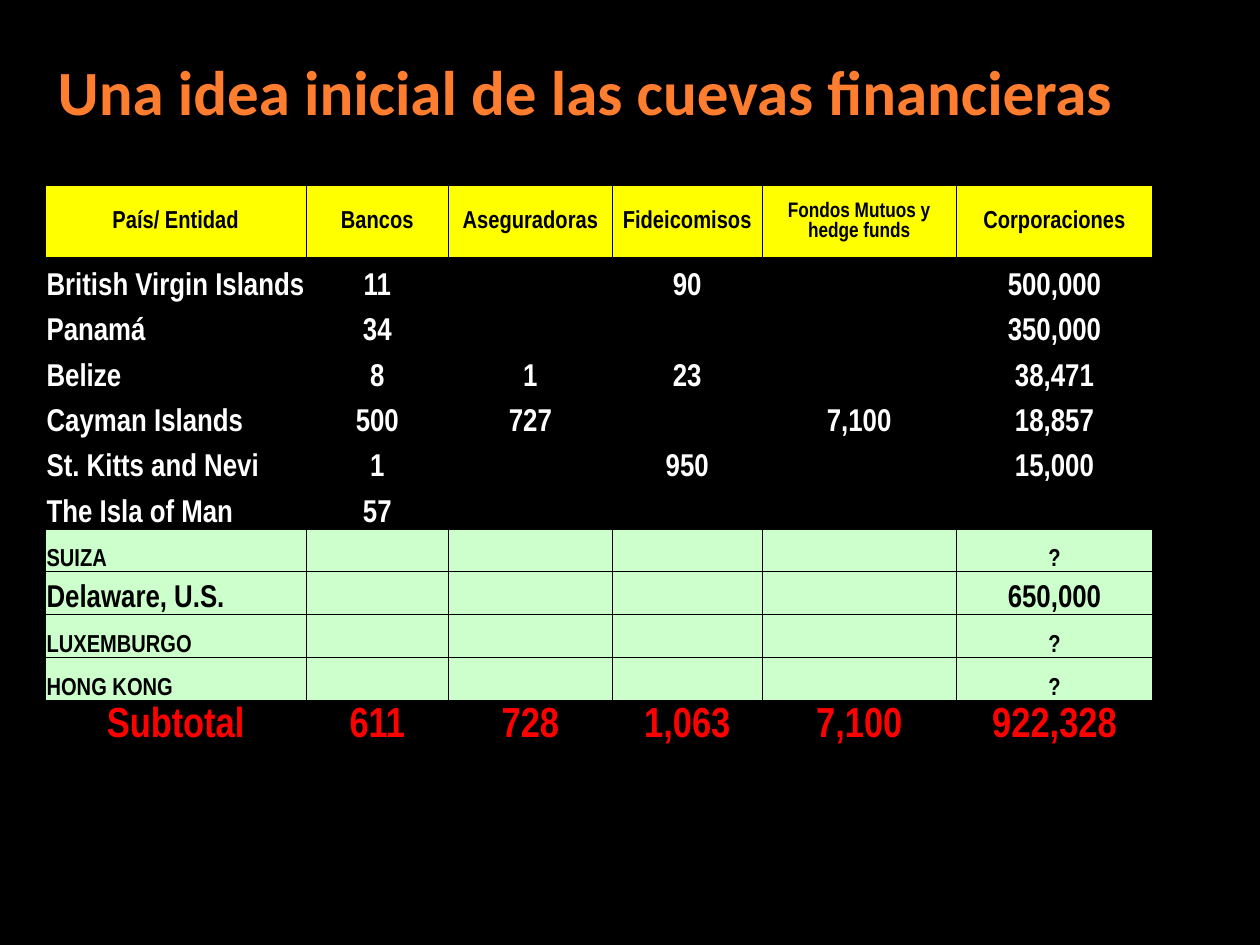
from lxml import etree
from pptx import Presentation
from pptx import util as u
from pptx.dml.color import RGBColor
from pptx.enum import text
from pptx.oxml import ns

BLACK = RGBColor(0, 0, 0)
WHITE = RGBColor(255, 255, 255)
ORANGE = RGBColor(0xFF, 0x7D, 0x2F)
YELLOW = RGBColor(255, 255, 0)
GREEN = RGBColor(0xCC, 0xFF, 0xCC)
RED = RGBColor(255, 0, 0)

MIDDLE = text.MSO_ANCHOR.MIDDLE
BOTTOM = text.MSO_ANCHOR.BOTTOM
CENTER = text.PP_ALIGN.CENTER
LEFT = text.PP_ALIGN.LEFT

COLUMN_WIDTHS = [2.07, 1.13, 1.3, 1.19, 1.54, 1.56]
HEADER = ["País/ Entidad", "Bancos", "Aseguradoras", "Fideicomisos",
          "Fondos Mutuos y hedge funds", "Corporaciones"]
HAVENS = [
    ["British Virgin Islands", "11", "", "90", "", "500,000"],
    ["Panamá", "34", "", "", "", "350,000"],
    ["Belize", "8", "1", "23", "", "38,471"],
    ["Cayman Islands", "500", "727", "", "7,100", "18,857"],
    ["St. Kitts and Nevi", "1", "", "950", "", "15,000"],
    ["The Isla of Man", "57", "", "", "", ""],
]
OTHERS = [("SUIZA", "?", 14), ("Delaware, U.S.", "650,000", 18),
          ("LUXEMBURGO", "?", 14), ("HONG KONG", "?", 14)]
SUBTOTAL = ["Subtotal", "611", "728", "1,063", "7,100", "922,328"]


class SlideBuilder:
    title_font = "Calibri"
    table_font = "Arial Narrow"

    def __init__(self, presentation):
        self.slide = presentation.slides.add_slide(presentation.slide_layouts[6])
        fill = self.slide.background.fill
        fill.solid()
        fill.fore_color.rgb = BLACK

    def set_text(self, frame, value, font, size, color, align):
        frame.text = value
        paragraph = frame.paragraphs[0]
        paragraph.alignment = align
        for run in paragraph.runs:
            run.font.name = font
            run.font.size = u.Pt(size)
            run.font.bold = True
            run.font.color.rgb = color

    def title(self, value, left, top, width, height):
        shape = self.slide.shapes.add_textbox(
            u.Inches(left), u.Inches(top), u.Inches(width), u.Inches(height))
        frame = shape.text_frame
        frame.word_wrap = True
        frame.vertical_anchor = MIDDLE
        self.set_text(frame, value, self.title_font, 36, ORANGE, CENTER)

    def table(self, left, top, widths, heights):
        shape = self.slide.shapes.add_table(
            len(heights), len(widths), u.Inches(left), u.Inches(top),
            u.Inches(sum(widths)), u.Inches(sum(heights)))
        table = shape.table
        table.first_row = table.horz_banding = False
        for column, width in zip(table.columns, widths):
            column.width = u.Inches(width)
        for row, height in zip(table.rows, heights):
            row.height = u.Inches(height)
        return table

    def borders(self, cell, widths):
        properties = cell._tc.get_or_add_tcPr()
        for index, (side, width) in enumerate(widths.items()):
            line = etree.Element(ns.qn(f"a:ln{side}"), w=str(u.Pt(width)))
            fill = etree.SubElement(line, ns.qn("a:solidFill"))
            etree.SubElement(fill, ns.qn("a:srgbClr"), val=str(BLACK))
            properties.insert(index, line)

    def row(self, table, index, values, sizes, color, fill=None,
            anchor=BOTTOM, first_align=LEFT):
        last_row, last_column = len(table.rows) - 1, len(values) - 1
        for column, (value, size) in enumerate(zip(values, sizes)):
            cell = table.cell(index, column)
            cell.margin_left = cell.margin_right = cell.margin_top = u.Inches(0.01)
            cell.margin_bottom = 0
            cell.vertical_anchor = anchor
            if fill is None:
                cell.fill.background()
            else:
                cell.fill.solid()
                cell.fill.fore_color.rgb = fill
            self.set_text(cell.text_frame, value, self.table_font, size, color,
                          CENTER if column else first_align)
            self.borders(cell, {
                "L": 1 if column == 0 else 0.5,
                "R": 1 if column == last_column else 0.5,
                "T": 1 if index == 0 else 0.5,
                "B": 1 if index == last_row else 0.5,
            })


def main():
    presentation = Presentation()
    presentation.slide_width = u.Inches(10)
    presentation.slide_height = u.Inches(7.5)
    builder = SlideBuilder(presentation)
    builder.title("Una idea inicial de las cuevas financieras", 0.14, 0.12, 9.01, 1.2)

    heights = [0.57] + [0.36] * len(HAVENS) + [0.34] * len(OTHERS) + [0.38]
    table = builder.table(0.36, 1.47, COLUMN_WIDTHS, heights)
    builder.row(table, 0, HEADER, [14, 14, 14, 14, 12, 14], BLACK, YELLOW, MIDDLE, CENTER)
    for index, values in enumerate(HAVENS, 1):
        builder.row(table, index, values, [18] * 6, WHITE)
    for index, (name, corporations, size) in enumerate(OTHERS, 1 + len(HAVENS)):
        values = [name, "", "", "", "", corporations]
        builder.row(table, index, values, [size] * 6, BLACK, GREEN)
    builder.row(table, len(heights) - 1, SUBTOTAL, [24] * 6, RED, None, MIDDLE, CENTER)

    presentation.save("out.pptx")


if __name__ == "__main__":
    main()
